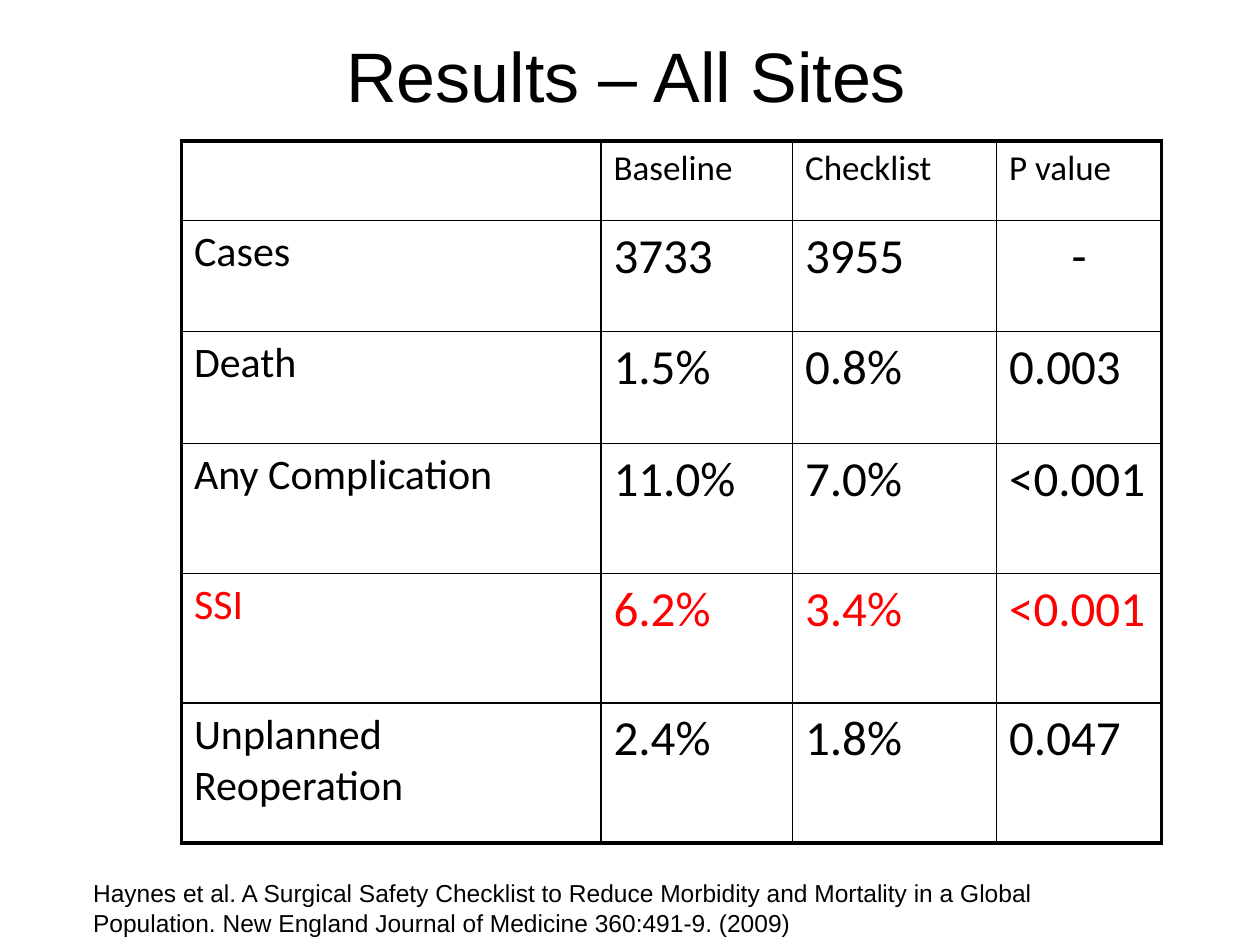
from lxml import etree
from pptx import Presentation
from pptx.dml.color import RGBColor
from pptx.enum import text
from pptx.oxml import ns
from pptx.util import Inches, Pt

BLACK, RED = "000000", "FF0000"
COLUMN_WIDTHS = [3.33, 1.52, 1.62, 1.31]
ROW_HEIGHTS = [0.63, 0.88, 0.89, 1.03, 1.03, 1.11]
RESULTS = [
    ["", "Baseline", "Checklist", "P value"],
    ["Cases", "3733", "3955", "-"],
    ["Death", "1.5%", "0.8%", "0.003"],
    ["Any Complication", "11.0%", "7.0%", "<0.001"],
    ["SSI", "6.2%", "3.4%", "<0.001"],
    ["Unplanned Reoperation", "2.4%", "1.8%", "0.047"],
]
CITATION = (
    "Haynes et al. A Surgical Safety Checklist to Reduce Morbidity and Mortality "
    "in a Global Population. New England Journal of Medicine 360:491-9. (2009)"
)


def style(paragraph, font_name, size, color=BLACK):
    """Set the font, size and colour of a paragraph."""
    paragraph.font.name = font_name
    paragraph.font.size = Pt(size)
    paragraph.font.color.rgb = RGBColor.from_string(color)


def add_text(slide, box, wording, size, align, anchor):
    """Add a wrapped Arial text box in the given box."""
    frame = slide.shapes.add_textbox(*map(Inches, box)).text_frame
    frame.word_wrap = True
    frame.vertical_anchor = anchor
    paragraph = frame.paragraphs[0]
    paragraph.text = wording
    paragraph.alignment = align
    style(paragraph, "Arial", size)


def set_borders(cell, widths):
    """Draw solid black cell borders with a width in points for each side."""
    properties = cell._tc.get_or_add_tcPr()
    for position, (side, width) in enumerate(widths.items()):
        line = etree.Element(ns.qn(f"a:ln{side}"), w=str(Pt(width)))
        fill = etree.SubElement(line, ns.qn("a:solidFill"))
        etree.SubElement(fill, ns.qn("a:srgbClr"), val=BLACK)
        properties.insert(position, line)


def fill_cell(cell, wording, row, column):
    """Write and style one result according to its place in the table."""
    cell.fill.background()
    last_row, last_column = len(ROW_HEIGHTS) - 1, len(COLUMN_WIDTHS) - 1
    outer = {"L": column == 0, "R": column == last_column,
             "T": row == 0, "B": row == last_row}
    set_borders(cell, {side: 2.25 if edge else 1 for side, edge in outer.items()})
    cell.margin_left = cell.margin_right = Inches(0.1)
    cell.margin_top = cell.margin_bottom = Inches(0.05)
    paragraph = cell.text_frame.paragraphs[0]
    paragraph.text = wording
    if wording == "-":
        paragraph.alignment = text.PP_ALIGN.CENTER
    size = 20 if row == 0 else 24 if column == 0 else 28
    style(paragraph, "Calibri", size, RED if RESULTS[row][0] == "SSI" else BLACK)


def add_results(slide, left, top):
    """Add the results table with its top left corner at the given place."""
    table = slide.shapes.add_table(
        len(ROW_HEIGHTS), len(COLUMN_WIDTHS), Inches(left), Inches(top),
        Inches(sum(COLUMN_WIDTHS)), Inches(sum(ROW_HEIGHTS))).table
    table.first_row = table.horz_banding = False
    for column, width in zip(table.columns, COLUMN_WIDTHS):
        column.width = Inches(width)
    for row, height in zip(table.rows, ROW_HEIGHTS):
        row.height = Inches(height)
    for row, results in enumerate(RESULTS):
        for column, wording in enumerate(results):
            fill_cell(table.cell(row, column), wording, row, column)


def main():
    """Build and save the slide."""
    deck = Presentation()
    deck.slide_width, deck.slide_height = Inches(10), Inches(7.5)
    slide = deck.slides.add_slide(deck.slide_layouts[6])
    add_text(slide, (0.72, 0.08, 8.5, 1.03), "Results – All Sites", 40,
             text.PP_ALIGN.CENTER, text.MSO_ANCHOR.MIDDLE)
    add_results(slide, 1.44, 1.12)
    add_text(slide, (0.64, 6.92, 8.58, 0.57), CITATION, 14,
             text.PP_ALIGN.LEFT, text.MSO_ANCHOR.TOP)
    deck.save("out.pptx")


if __name__ == "__main__":
    main()
